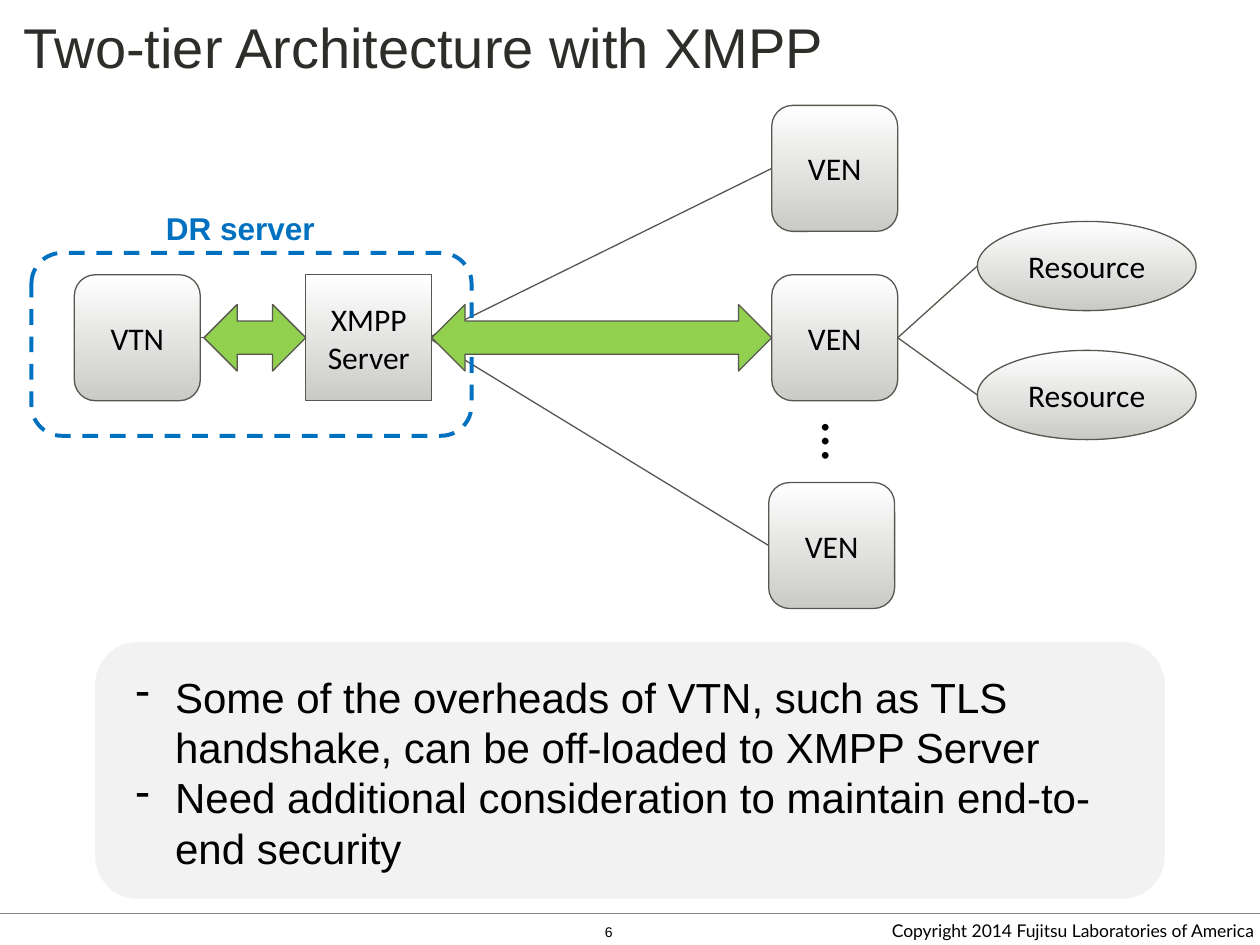
"""Build the slide on a two-tier architecture with XMPP."""
from dataclasses import dataclass
from typing import Any

from pptx import Presentation
from pptx.dml.color import RGBColor
from pptx.enum.dml import MSO_LINE
from pptx.enum.shapes import MSO_CONNECTOR, MSO_SHAPE
from pptx.enum.text import MSO_ANCHOR, MSO_AUTO_SIZE, PP_ALIGN
from pptx.oxml.ns import qn
from pptx.util import Pt
from lxml.etree import SubElement

BLACK = RGBColor(0x00, 0x00, 0x00)
WHITE = RGBColor(0xFF, 0xFF, 0xFF)
INK = RGBColor(0x2D, 0x2D, 0x2A)
EDGE = RGBColor(0x57, 0x56, 0x4F)
RULE = RGBColor(0x87, 0x86, 0x7E)
SHADE = RGBColor(0xCA, 0xCA, 0xC7)
PANEL = RGBColor(0xF2, 0xF2, 0xF2)
BLUE = RGBColor(0x00, 0x70, 0xC0)
GREEN = RGBColor(0x92, 0xD0, 0x50)

SIDE = 72
MID = 193


@dataclass(frozen=True)
class Node:
    """A labelled box of the diagram."""
    label: str
    left: float
    top: float
    width: float = SIDE
    height: float = SIDE
    kind: Any = MSO_SHAPE.ROUNDED_RECTANGLE

    @property
    def west(self) -> tuple[float, float]:
        """Return the middle of the left edge."""
        return self.left, self.top + self.height / 2

    @property
    def east(self) -> tuple[float, float]:
        """Return the middle of the right edge."""
        return self.left + self.width, self.top + self.height / 2


VTN = Node("VTN", 42.5, MID - SIDE / 2)
HUB = Node("XMPP\nServer", 174.75, MID - SIDE / 2, kind=MSO_SHAPE.RECTANGLE)
VENS = [Node("VEN", 441, MID - SIDE / 2), Node("VEN", 441, 60.25),
        Node("VEN", 439.25, 275.75)]
GOODS = [Node("Resource", 558.5, top, 125, 51, MSO_SHAPE.OVAL)
         for top in (126.5, 200.25)]
NOTES = """Some of the overheads of VTN, such as TLS handshake, can be off-loaded to XMPP Server
Need additional consideration to maintain end-to-end security"""


def write(shape: Any, text: str, *, size: float, font: str = "Arial",
          color: RGBColor = BLACK, bold: bool = False, align: Any = PP_ALIGN.LEFT,
          anchor: Any = MSO_ANCHOR.TOP, inset: bool = True, wrap: bool = True,
          grow: bool = False, dash: float = 0) -> None:
    """Fill a shape with formatted lines of text."""
    frame = shape.text_frame
    frame.text = text
    frame.word_wrap = wrap
    frame.vertical_anchor = anchor
    frame.auto_size = MSO_AUTO_SIZE.SHAPE_TO_FIT_TEXT if grow else MSO_AUTO_SIZE.NONE
    if not inset:
        frame.margin_left = frame.margin_right = Pt(0)
        frame.margin_top = frame.margin_bottom = Pt(0)
    for para in frame.paragraphs:
        para.alignment = align
        if dash:
            props = para._p.get_or_add_pPr()
            props.set("marL", str(Pt(dash)))
            props.set("indent", str(-Pt(dash)))
            SubElement(props, qn("a:buChar"), char="-")
        for run in para.runs:
            run.font.size = Pt(size)
            run.font.name = font
            run.font.bold = bold
            run.font.color.rgb = color


def add_box(slide: Any, left: float, top: float, width: float, height: float,
            text: str, **style: Any) -> Any:
    """Add a text box."""
    box = slide.shapes.add_textbox(Pt(left), Pt(top), Pt(width), Pt(height))
    write(box, text, **style)
    return box


def add_form(slide: Any, kind: Any, left: float, top: float, width: float,
             height: float, fill: RGBColor | None = None, edge: RGBColor = EDGE,
             weight: float = 0.75) -> Any:
    """Add a preset shape with a plain fill or none."""
    form = slide.shapes.add_shape(kind, Pt(left), Pt(top), Pt(width), Pt(height))
    form.shadow.inherit = False
    if fill is None:
        form.fill.background()
    else:
        form.fill.solid()
        form.fill.fore_color.rgb = fill
    form.line.color.rgb = edge
    form.line.width = Pt(weight)
    return form


def add_node(slide: Any, node: Node) -> None:
    """Add a shaded node with its label."""
    form = add_form(slide, node.kind, node.left, node.top, node.width, node.height)
    form.fill.gradient()
    form.fill.gradient_angle = 270
    for stop, color in zip(form.fill.gradient_stops, (WHITE, SHADE)):
        stop.color.rgb = color
    write(form, node.label, size=18, font="Calibri", align=PP_ALIGN.CENTER,
          anchor=MSO_ANCHOR.MIDDLE, wrap=False)


def add_link(slide: Any, start: tuple[float, float], end: tuple[float, float],
             color: RGBColor = EDGE, weight: float = 0.75) -> None:
    """Add a straight line between two points."""
    link = slide.shapes.add_connector(
        MSO_CONNECTOR.STRAIGHT, *(Pt(value) for value in (*start, *end)))
    link.line.color.rgb = color
    link.line.width = Pt(weight)
    SubElement(link._element.spPr, qn("a:effectLst"))


def add_arrow(slide: Any, start: float, end: float, thick: float = 38) -> None:
    """Add a level double arrow on the middle axis."""
    span = end - start
    arrow = add_form(slide, MSO_SHAPE.UP_DOWN_ARROW, (start + end - thick) / 2,
                     MID - span / 2, thick, span, GREEN)
    arrow.rotation = 90


def main() -> None:
    """Draw the slide and save it."""
    deck = Presentation()
    deck.slide_width, deck.slide_height = Pt(720), Pt(540)
    slide = deck.slides.add_slide(deck.slide_layouts[5])
    title = slide.shapes.title
    title.left, title.top, title.width, title.height = Pt(13.5), Pt(3), Pt(630), Pt(47)
    write(title, "Two-tier Architecture with XMPP", size=32, color=INK,
          anchor=MSO_ANCHOR.MIDDLE, inset=False)
    add_link(slide, (0, 522), (720, 522), RULE, 1)

    for ven in VENS:
        add_link(slide, (HUB.east[0] - 2, MID), ven.west)
    for good in GOODS:
        add_link(slide, VENS[0].east, good.west)
    add_link(slide, VTN.east, HUB.west)
    for node in (VTN, HUB, *VENS, *GOODS):
        add_node(slide, node)
    more = add_box(slide, 468, 226, 29, 46, "…", size=32, font="Calibri", grow=True)
    more.rotation = 90

    add_form(slide, MSO_SHAPE.ROUNDED_RECTANGLE, 54, 366.5, 612, 147.5, PANEL, WHITE)
    add_box(slide, 70.5, 380, 590, 124, NOTES, size=24, grow=True, dash=22.5)

    zone = add_form(slide, MSO_SHAPE.ROUNDED_RECTANGLE, 18, 144.5, 251.5, 104.5,
                    edge=BLUE, weight=2.25)
    zone.line.dash_style = MSO_LINE.DASH
    add_box(slide, 87.75, 116, 100, 29, "DR server", size=18, color=BLUE,
            bold=True, wrap=False, grow=True)
    add_arrow(slide, HUB.east[0], VENS[0].west[0])
    add_arrow(slide, VTN.east[0] + 2, HUB.west[0])

    add_box(slide, 399.5, 524, 317, 16, "Copyright 2014 Fujitsu Laboratories of America",
            size=10, font="Lato", align=PP_ALIGN.RIGHT, anchor=MSO_ANCHOR.MIDDLE,
            inset=False)
    add_box(slide, 338.5, 524, 42.5, 16, "6", size=8)
    deck.save("out.pptx")


if __name__ == "__main__":
    main()
